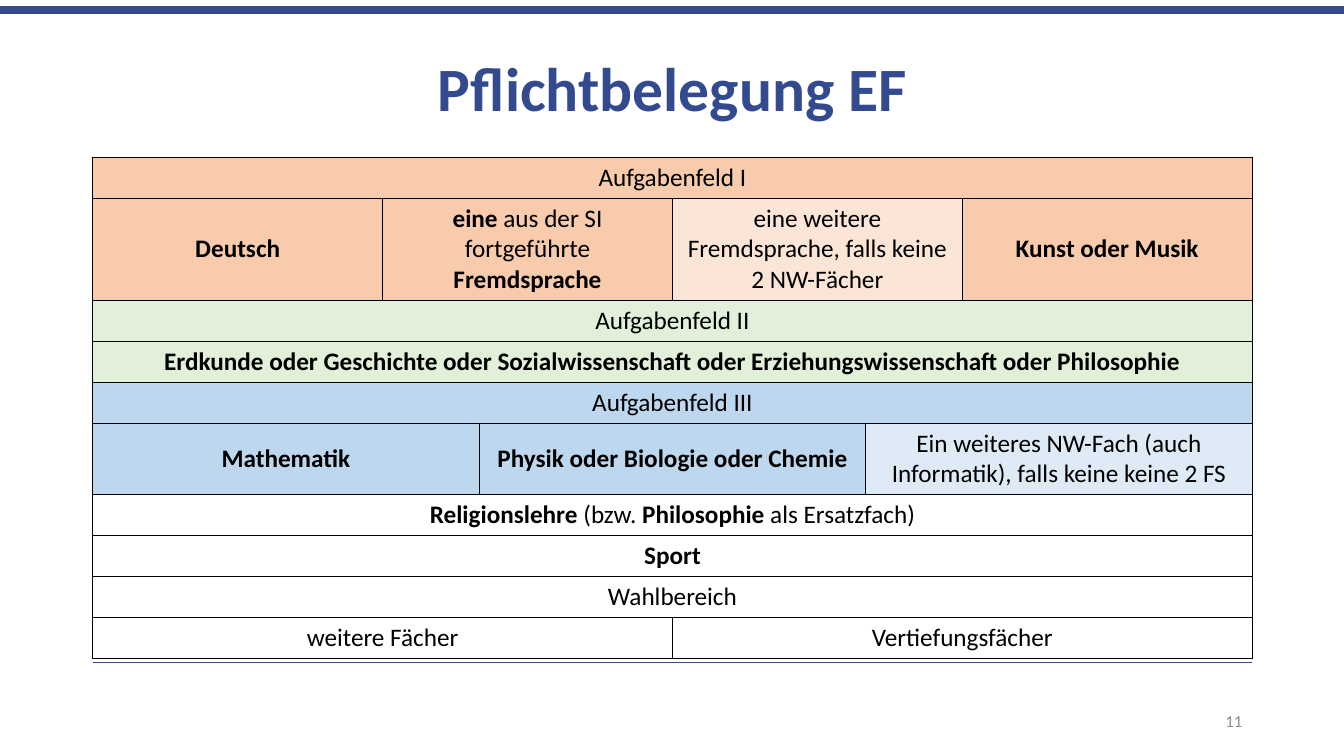
from pptx import Presentation
from pptx.dml.color import RGBColor
from pptx.enum.shapes import MSO_CONNECTOR
from pptx.enum.text import MSO_ANCHOR, PP_ALIGN
from pptx.oxml import parse_xml
from pptx.oxml.ns import nsdecls
from pptx.util import Inches, Pt

COLORS = {
    "navy": "334A8E", "gray": "8C8C8C", "black": "000000", "white": "FFFFFF",
    "orange": "F8CBAD", "light orange": "FBE5D6", "green": "E2F0D9",
    "blue": "BDD7EE", "light blue": "DEEBF7",
}
FONT = "Calibri"
TITLE = "Pflichtbelegung EF"
PAGE = "11"

# One entry per row: text lines, then equally wide cells; ** marks bold text
ROWS = [
    (1, [("Aufgabenfeld I", "orange")]),
    (3, [("**Deutsch**", "orange"),
         ("**eine** aus der SI fortgeführte **Fremdsprache**", "orange"),
         ("eine weitere Fremdsprache, falls keine 2 NW-Fächer", "light orange"),
         ("**Kunst oder Musik**", "orange")]),
    (1, [("Aufgabenfeld II", "green")]),
    (1, [("**Erdkunde oder Geschichte oder Sozialwissenschaft oder "
          "Erziehungswissenschaft oder Philosophie**", "green")]),
    (1, [("Aufgabenfeld III", "blue")]),
    (2, [("**Mathematik**", "blue"),
         ("**Physik oder Biologie oder Chemie**", "blue"),
         ("Ein weiteres NW-Fach (auch Informatik), falls keine keine 2 FS",
          "light blue")]),
    (1, [("**Religionslehre** (bzw. **Philosophie** als Ersatzfach)", "white")]),
    (1, [("**Sport**", "white")]),
    (1, [("Wahlbereich", "white")]),
    (1, [("weitere Fächer", "white"), ("Vertiefungsfächer", "white")]),
]
RULES = [(0, 13.33, 0.1, 6), (0.92, 12.42, 6.57, 1)]  # left, right, y, width
LEFT, TOP, WIDTH = 0.92, 1.56, 11.5
UNITS = 12  # divisible into 1, 2, 3 and 4 equal cells
LINE_HEIGHT, CELL_PADDING = 0.305, 0.1


def rgb(name):
    return RGBColor.from_string(COLORS[name])


def write(tf, text, size, color, align, bold=False):
    """Fill the first paragraph, toggling bold at each ** mark."""
    tf.word_wrap = True
    tf.vertical_anchor = MSO_ANCHOR.MIDDLE
    p = tf.paragraphs[0]
    p.alignment = align
    for i, part in enumerate(text.split("**")):
        if part:
            r = p.add_run()
            r.text = part
            fmt = {"name": FONT, "size": Pt(size), "bold": bold or i % 2 == 1}
            for key, value in fmt.items():
                setattr(r.font, key, value)
            r.font.color.rgb = rgb(color)
    return p


def style_cell(cell, color):
    cell.fill.solid()
    cell.fill.fore_color.rgb = rgb(color)
    tc_pr = cell._tc.get_or_add_tcPr()
    for i, side in enumerate("LRTB"):
        tc_pr.insert(i, parse_xml(
            f'<a:ln{side} {nsdecls("a")} w="{Pt(1)}"><a:solidFill>'
            f'<a:srgbClr val="{COLORS["black"]}"/></a:solidFill></a:ln{side}>'))


def add_rule(s, left, right, y, width):
    line = s.shapes.add_connector(MSO_CONNECTOR.STRAIGHT, Inches(left),
                                  Inches(y), Inches(right), Inches(y))
    line.line.color.rgb = rgb("navy")
    line.line.width = Pt(width)
    line._element.spPr.append(parse_xml(f'<a:effectLst {nsdecls("a")}/>'))


def add_subject_table(s):
    edges = sorted({i * UNITS // len(cells)
                    for _, cells in ROWS for i in range(len(cells) + 1)})
    heights = [lines * LINE_HEIGHT + CELL_PADDING for lines, _ in ROWS]
    table = s.shapes.add_table(
        len(ROWS), len(edges) - 1, Inches(LEFT), Inches(TOP),
        Inches(WIDTH), Inches(sum(heights))).table
    table.first_row = table.horz_banding = False
    for col, start, end in zip(table.columns, edges, edges[1:]):
        col.width = Inches(WIDTH * (end - start) / UNITS)

    for y, (_, cells) in enumerate(ROWS):
        table.rows[y].height = Inches(heights[y])
        span = UNITS // len(cells)
        for i, (text, color) in enumerate(cells):
            first = edges.index(i * span)
            last = edges.index((i + 1) * span) - 1
            for x in range(first, last + 1):
                style_cell(table.cell(y, x), color)
            cell = table.cell(y, first)
            if last > first:
                cell.merge(table.cell(y, last))
            cell.vertical_anchor = MSO_ANCHOR.MIDDLE
            write(cell.text_frame, text, 18, "black", PP_ALIGN.CENTER)


def main():
    prs = Presentation()
    prs.slide_width, prs.slide_height = Inches(13.33), Inches(7.5)
    s = prs.slides.add_slide(prs.slide_layouts[5])
    for rule in RULES:
        add_rule(s, *rule)

    title = s.shapes.title
    title.left, title.top = Inches(LEFT), Inches(0.4)
    title.width, title.height = Inches(WIDTH), Inches(1.01)
    p = write(title.text_frame, TITLE, 44, "navy", PP_ALIGN.CENTER, bold=True)
    p.line_spacing = 0.9

    add_subject_table(s)
    number = s.shapes.add_textbox(Inches(9.42), Inches(6.95),
                                  Inches(3), Inches(0.4))
    write(number.text_frame, PAGE, 12, "gray", PP_ALIGN.RIGHT)
    prs.save("out.pptx")


if __name__ == "__main__":
    main()
